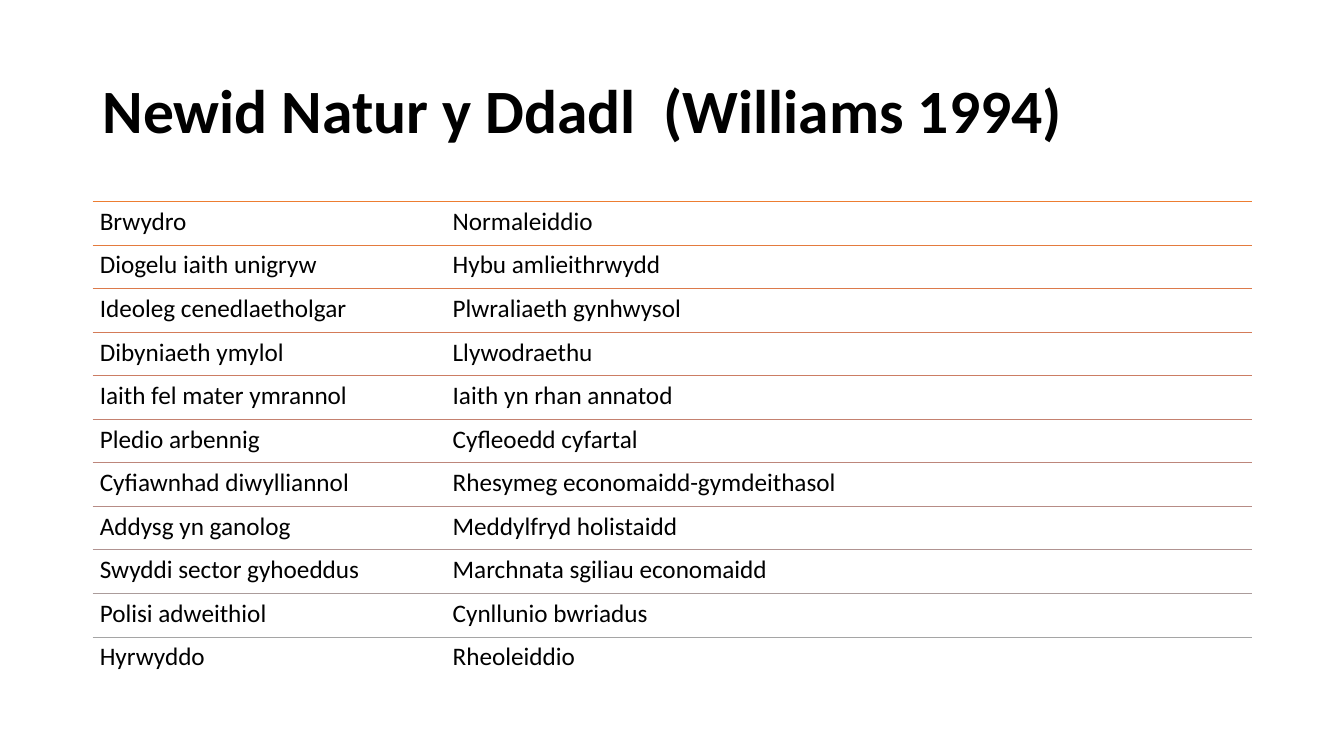
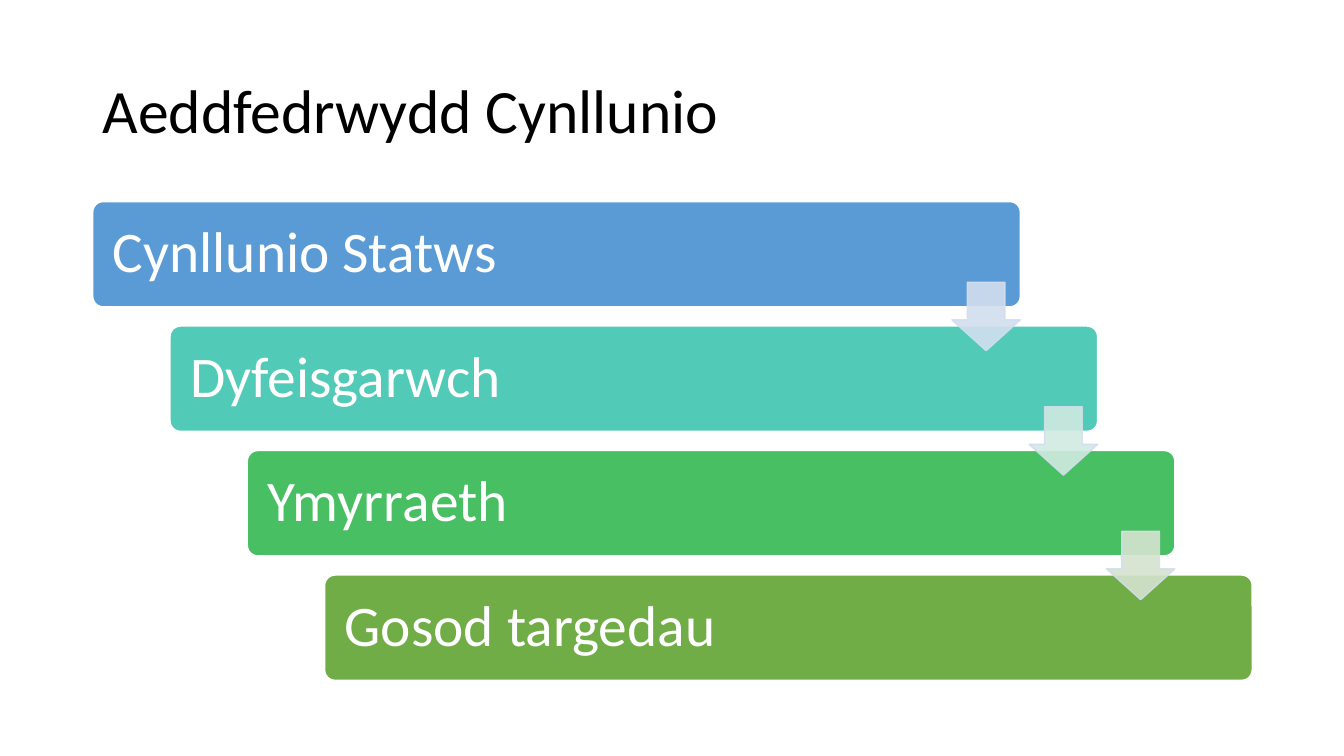
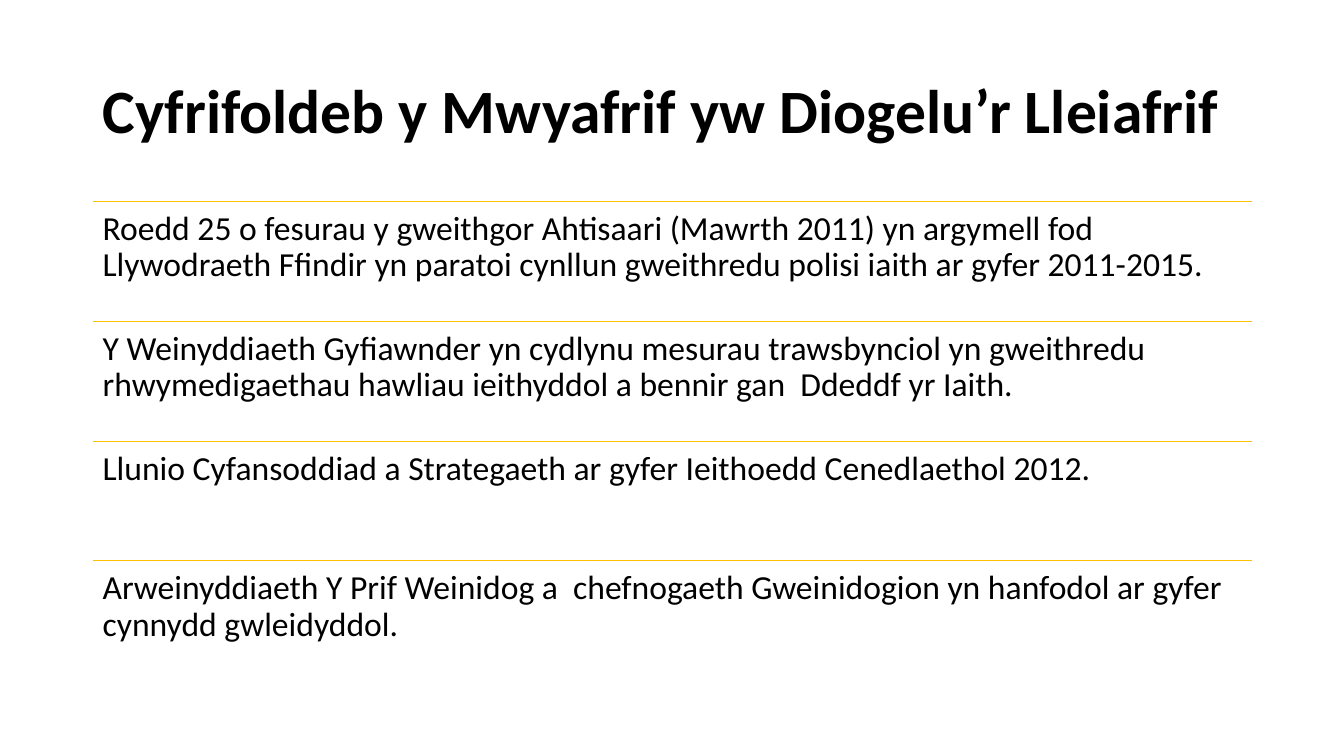
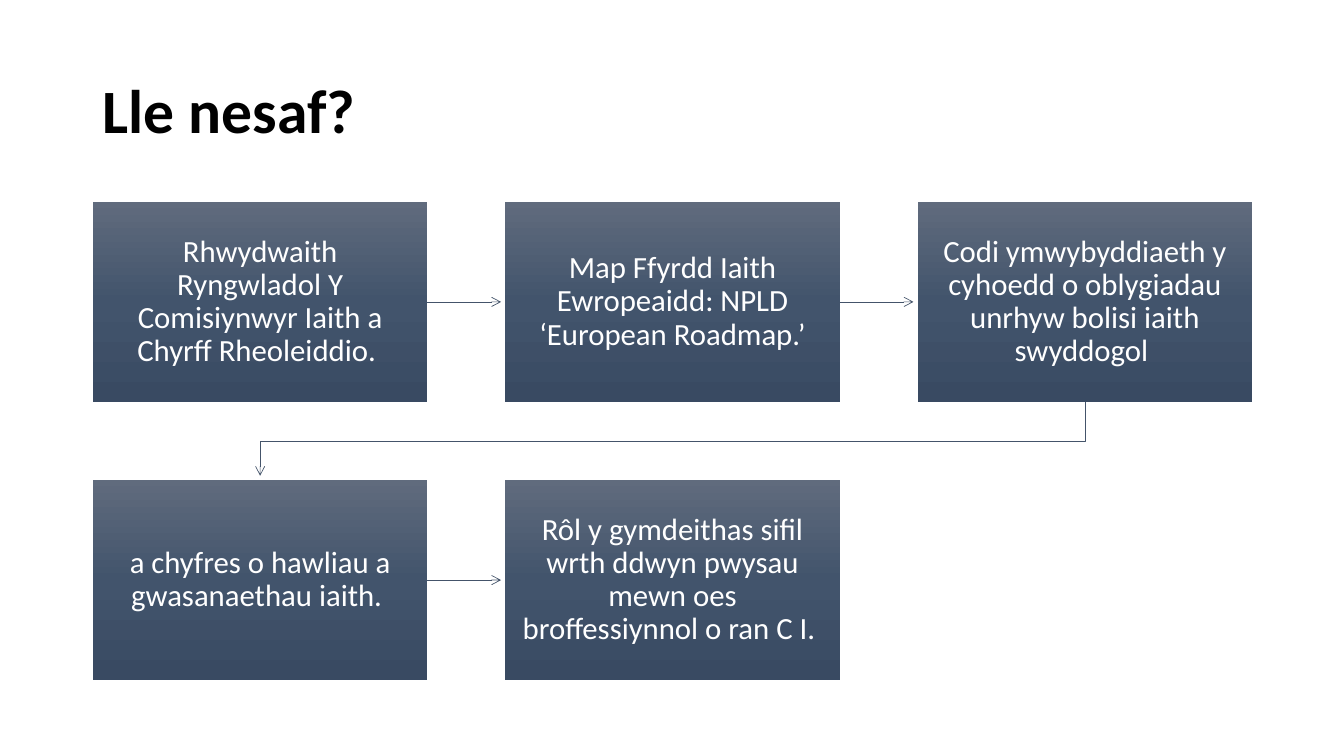
from collections import namedtuple
from dataclasses import dataclass
from itertools import pairwise

from lxml import etree
from pptx import Presentation
from pptx import util as u
from pptx.dml.color import RGBColor
from pptx.enum import shapes, text
from pptx.oxml.ns import qn

Box = namedtuple("Box", "left top width height")


@dataclass(frozen=True)
class Theme:
    font: str = "Calibri"
    ink: str = "000000"
    paper: str = "FFFFFF"
    gold: str = "FFC000"
    slate: str = "44546A"
    arrow_edge: str = "D2DEEF"
    contrast_rules: tuple = (
        "ED7D31", "E47B3E", "DC7A4B", "D47B58", "CC7D64", "C48170",
        "BD867B", "B78C86", "B09391", "AB9C9B", "A5A5A5",
    )
    bands: tuple = ("5B9BD5", "52CAB8", "49BF64", "70AD47")
    arrows: tuple = ("D2DEEF", "D0EAE1", "D5E3CF")
    card_stops: tuple = ((0, "606B7D"), (50, "42546C"), (100, "394A62"))
    title_size: int = 44
    band_size: int = 41
    statement_size: int = 24
    card_size: int = 22
    contrast_size: int = 18
    thin: float = 0.5


THEME = Theme()
TITLE = Box(0.92, 0.4, 11.5, 1.45)
BODY = Box(0.92, 2, 11.5, 4.75)

CONTRASTS = (
    ("Brwydro", "Normaleiddio"),
    ("Diogelu iaith unigryw", "Hybu amlieithrwydd"),
    ("Ideoleg cenedlaetholgar", "Plwraliaeth gynhwysol"),
    ("Dibyniaeth ymylol", "Llywodraethu"),
    ("Iaith fel mater ymrannol", "Iaith yn rhan annatod"),
    ("Pledio arbennig", "Cyfleoedd cyfartal"),
    ("Cyfiawnhad diwylliannol", "Rhesymeg economaidd-gymdeithasol"),
    ("Addysg yn ganolog", "Meddylfryd holistaidd"),
    ("Swyddi sector gyhoeddus", "Marchnata sgiliau economaidd"),
    ("Polisi adweithiol", "Cynllunio bwriadus"),
    ("Hyrwyddo", "Rheoleiddio"),
)
STAGES = ("Cynllunio Statws", "Dyfeisgarwch", "Ymyrraeth", "Gosod targedau")
STATEMENTS = (
    "Roedd 25 o fesurau y gweithgor Ahtisaari (Mawrth 2011) yn argymell fod "
    "Llywodraeth Ffindir yn paratoi cynllun gweithredu polisi iaith ar gyfer 2011-2015.",
    "Y Weinyddiaeth Gyfiawnder yn cydlynu mesurau trawsbynciol yn gweithredu "
    "rhwymedigaethau hawliau ieithyddol a bennir gan  Ddeddf yr Iaith.",
    "Llunio Cyfansoddiad a Strategaeth ar gyfer Ieithoedd Cenedlaethol 2012.",
    "Arweinyddiaeth Y Prif Weinidog a  chefnogaeth Gweinidogion yn hanfodol ar gyfer "
    "cynnydd gwleidyddol.",
)
STEPS = (
    "Rhwydwaith Ryngwladol Y Comisiynwyr Iaith a Chyrff Rheoleiddio. ",
    "Map Ffyrdd Iaith Ewropeaidd: NPLD ‘European Roadmap.’",
    "Codi ymwybyddiaeth y cyhoedd o oblygiadau unrhyw bolisi iaith swyddogol ",
    "a chyfres o hawliau a gwasanaethau iaith. ",
    "Rôl y gymdeithas sifil wrth ddwyn pwysau mewn oes broffessiynnol o ran C I. ",
)


def inches(values):
    return [u.Inches(value) for value in values]


def rgb(code):
    return RGBColor.from_string(code)


def write(shape, words, size, color=THEME.ink, bold=False, insets=(0.1, 0.05),
          anchor=text.MSO_ANCHOR.TOP, align=text.PP_ALIGN.LEFT):
    frame = shape.text_frame
    frame.word_wrap = True
    frame.vertical_anchor = anchor
    frame.margin_left = frame.margin_right = u.Inches(insets[0])
    frame.margin_top = frame.margin_bottom = u.Inches(insets[1])
    para = frame.paragraphs[0]
    para.alignment = align
    para.line_spacing = 0.9
    span = para.add_run()
    span.text = words
    span.font.name = THEME.font
    span.font.size = u.Pt(size)
    span.font.bold = bold
    span.font.color.rgb = rgb(color)
    return para


def set_tab(para, position):
    stops = etree.SubElement(para._p.get_or_add_pPr(), qn("a:tabLst"))
    etree.SubElement(stops, qn("a:tab"), pos=str(u.Inches(position)), algn="l")


def add_shadow(effects):
    shadow = etree.SubElement(effects, qn("a:outerShdw"), blurRad=str(u.Pt(4.5)),
                              dist=str(u.Pt(1.5)), dir="5400000", rotWithShape="0")
    color = etree.SubElement(shadow, qn("a:srgbClr"), val=THEME.ink)
    etree.SubElement(color, qn("a:alpha"), val="63000")


def add_line(page, start, end, color, shadow=False):
    line = page.shapes.add_connector(shapes.MSO_CONNECTOR.STRAIGHT, *inches(start + end))
    line.line.color.rgb = rgb(color)
    line.line.width = u.Pt(THEME.thin)
    effects = etree.SubElement(line._element.spPr, qn("a:effectLst"))
    if shadow:
        add_shadow(effects)
    return line


def add_arrowhead(line):
    etree.SubElement(line.line._get_or_add_ln(), qn("a:tailEnd"), type="arrow")


def add_block(page, preset, box, fill=None):
    block = page.shapes.add_shape(preset, *inches(box))
    block.shadow.inherit = False
    if fill:
        block.fill.solid()
        block.fill.fore_color.rgb = rgb(fill)
    return block


def add_page(deck, title, bold=True):
    page = deck.slides.add_slide(deck.slide_layouts[6])
    heading = page.shapes.add_textbox(*inches(TITLE))
    write(heading, title, THEME.title_size, bold=bold, anchor=text.MSO_ANCHOR.MIDDLE)
    return page


def add_ruled_list(page, box, lines, colors, size, inset, tab=None, shadow=False):
    height = box.height / len(lines)
    for index, (words, color) in enumerate(zip(lines, colors)):
        top = box.top + index * height
        add_line(page, (box.left, top), (box.left + box.width, top), color, shadow)
        row = page.shapes.add_textbox(*inches((box.left, top, box.width, height)))
        para = write(row, words, size, insets=(inset, inset))
        if tab:
            set_tab(para, tab)


def add_staircase(page, box, stages):
    width, height = box.width * 0.8, box.height * 0.22
    gaps = len(stages) - 1
    across, down = (box.width - width) / gaps, (box.height - height) / gaps
    bands = [Box(box.left + i * across, box.top + i * down, width, height)
             for i in range(len(stages))]
    for band, words, color in zip(bands, stages, THEME.bands):
        block = add_block(page, shapes.MSO_SHAPE.ROUNDED_RECTANGLE, band, color)
        block.adjustments[0] = 0.1
        block.line.color.rgb = rgb(THEME.paper)
        block.line.width = u.Pt(1)
        write(block, words, THEME.band_size, THEME.paper, insets=(0.17, 0.17),
              anchor=text.MSO_ANCHOR.MIDDLE)
    side = height * 0.65
    for band, color in zip(bands, THEME.arrows):
        place = Box(band.left + width - side, band.top + 0.8, side, side)
        arrow = add_block(page, shapes.MSO_SHAPE.DOWN_ARROW, place, color)
        arrow.adjustments[0], arrow.adjustments[1] = 0.55, 0.45
        arrow.line.color.rgb = rgb(THEME.arrow_edge)
        arrow.line.width = u.Pt(1)
        for shade in arrow._element.spPr.iter(qn("a:srgbClr")):
            etree.SubElement(shade, qn("a:alpha"), val="90000")


def add_card(page, box, words):
    card = add_block(page, shapes.MSO_SHAPE.RECTANGLE, box)
    card.fill.gradient()
    card.fill.gradient_angle = 270
    stops = card._element.spPr.find(".//" + qn("a:gsLst"))
    for stop in list(stops):
        stops.remove(stop)
    for percent, color in THEME.card_stops:
        stop = etree.SubElement(stops, qn("a:gs"), pos=str(percent * 1000))
        etree.SubElement(stop, qn("a:srgbClr"), val=color)
    card.line.fill.background()
    write(card, words, THEME.card_size, THEME.paper, insets=(0.16, 0.17),
          anchor=text.MSO_ANCHOR.MIDDLE, align=text.PP_ALIGN.CENTER)
    return card


def add_return_path(page, start, end, turn):
    points = [inches(point) for point in (start, (start[0], turn), (end[0], turn), end)]
    builder = page.shapes.build_freeform(*points[0], scale=1.0)
    builder.add_line_segments(points[1:], close=False)
    route = builder.convert_to_shape()
    route.shadow.inherit = False
    route.fill.background()
    route.line.color.rgb = rgb(THEME.slate)
    route.line.width = u.Pt(THEME.thin)
    add_arrowhead(route)


def add_flow(page, box, steps, columns=3):
    gap, clearance = 0.77, 0.04
    rows = -(-len(steps) // columns)
    width = (box.width - gap * (columns - 1)) / columns
    height = (box.height - gap * (rows - 1)) / rows
    places = [Box(box.left + i % columns * (width + gap),
                  box.top + i // columns * (height + gap), width, height)
              for i in range(len(steps))]
    cards = [add_card(page, place, words) for place, words in zip(places, steps)]
    for (here, card), (there, _) in pairwise(zip(places, cards)):
        if here.top == there.top:
            middle = here.top + height / 2
            arrow = add_line(page, (here.left + width, middle),
                             (there.left - clearance, middle), THEME.slate)
            arrow.begin_connect(card, 3)
            add_arrowhead(arrow)
        else:
            bottom = here.top + height
            add_return_path(page, (here.left + width / 2, bottom),
                            (there.left + width / 2, there.top - clearance),
                            bottom + gap / 2)


def main():
    deck = Presentation()
    deck.slide_width, deck.slide_height = inches((13.33, 7.5))

    page = add_page(deck, "Newid Natur y Ddadl  (Williams 1994)")
    add_ruled_list(page, BODY, ["\t".join(pair) for pair in CONTRASTS],
                   THEME.contrast_rules, THEME.contrast_size, 0.07, tab=3.5, shadow=True)

    page = add_page(deck, "Aeddfedrwydd Cynllunio", bold=False)
    add_staircase(page, BODY, STAGES)

    page = add_page(deck, "Cyfrifoldeb y Mwyafrif yw Diogelu’r Lleiafrif")
    add_ruled_list(page, BODY, STATEMENTS, [THEME.gold] * len(STATEMENTS),
                   THEME.statement_size, 0.1)

    page = add_page(deck, "Lle nesaf?")
    add_flow(page, BODY, STEPS)

    deck.save("out.pptx")


if __name__ == "__main__":
    main()
